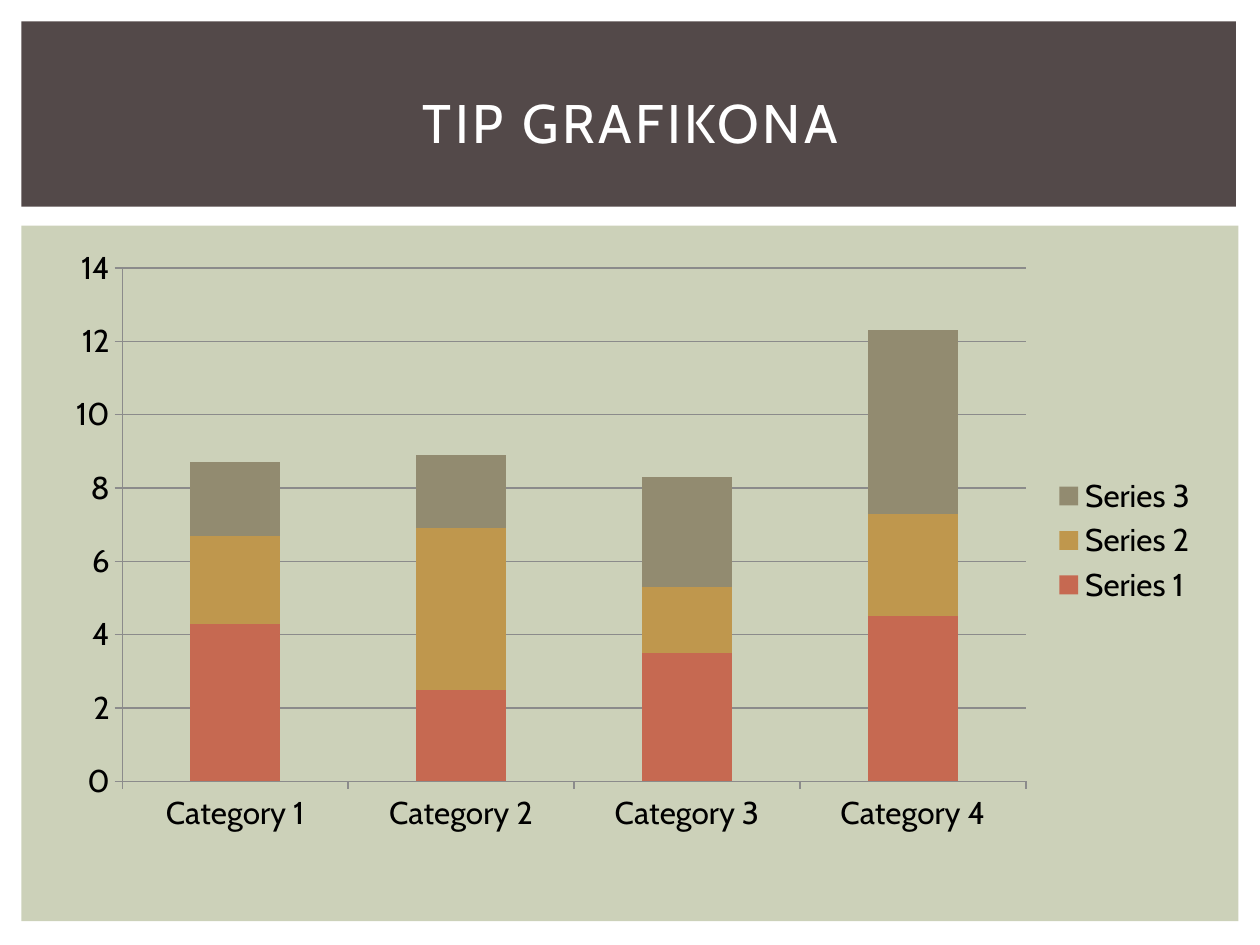
from pptx import Presentation
from pptx.chart.data import CategoryChartData
from pptx.dml.color import RGBColor
from pptx.enum import chart as charts, shapes, text
from pptx.util import Inches, Pt

FONT = "Cabin"
WHITE = RGBColor(0xFF, 0xFF, 0xFF)
BLACK = RGBColor(0x00, 0x00, 0x00)
SAGE = RGBColor(0xCC, 0xD1, 0xB9)
BROWN = RGBColor(0x53, 0x49, 0x49)
GRID = RGBColor(0x8B, 0x8B, 0x8B)
RUST = RGBColor(0xC6, 0x69, 0x51)
GOLD = RGBColor(0xBF, 0x97, 0x4D)
OLIVE = RGBColor(0x92, 0x8B, 0x70)

SERIES = [
    ("Series 1", (4.3, 2.5, 3.5, 4.5), RUST),
    ("Series 2", (2.4, 4.4, 1.8, 2.8), GOLD),
    ("Series 3", (2, 2, 3, 5), OLIVE),
]


def write(frame, wording, size, color, align, spacing=0):
    """Fill a text frame with one formatted line; spacing is in points."""
    frame.word_wrap = True
    frame.vertical_anchor = text.MSO_ANCHOR.MIDDLE
    frame.margin_left = frame.margin_right = Inches(0.1)
    frame.margin_top = frame.margin_bottom = Inches(0.05)
    para = frame.paragraphs[0]
    para.alignment = align
    span = para.add_run()
    span.text = wording
    span.font.name = FONT
    span.font.size = Pt(size)
    span.font.color.rgb = color
    span.font._element.set("spc", str(spacing * 100))


deck = Presentation()
deck.slide_width, deck.slide_height = Inches(10), Inches(7.5)
page = deck.slides.add_slide(deck.slide_layouts[5])

# Background panels
for top, width, height, color in [(1.79, 9.66, 5.52, SAGE), (0.17, 9.64, 1.47, BROWN)]:
    panel = page.shapes.add_shape(
        shapes.MSO_SHAPE.RECTANGLE,
        Inches(0.17), Inches(top), Inches(width), Inches(height))
    panel.shadow.inherit = False
    panel.fill.solid()
    panel.fill.fore_color.rgb = color
    panel.line.fill.background()

# Title, brought in front of the panels
title = page.shapes.title
page.shapes._spTree.append(title._element)
title.left, title.top = Inches(0.42), Inches(0.39)
title.width, title.height = Inches(9.17), Inches(1.15)
write(title.text_frame, "TIP GRAFIKONA", size=31, color=WHITE,
      align=text.PP_ALIGN.CENTER, spacing=2)

# Stacked column chart
data = CategoryChartData()
data.categories = [f"Category {number}" for number in range(1, 5)]
for name, values, _ in SERIES:
    data.add_series(name, values)
chart = page.shapes.add_chart(
    charts.XL_CHART_TYPE.COLUMN_STACKED,
    Inches(0.42), Inches(1.88), Inches(9.19), Inches(4.82), data).chart
chart.has_title = False
chart.font.name = FONT
chart.font.size = Pt(18)
chart.font.color.rgb = BLACK

chart.has_legend = True
chart.legend.position = charts.XL_LEGEND_POSITION.RIGHT
chart.legend.include_in_layout = False

plot = chart.plots[0]
plot.gap_width = 150
plot.overlap = 100
plot.vary_by_categories = False
for series, (_, _, color) in zip(plot.series, SERIES):
    series.format.fill.solid()
    series.format.fill.fore_color.rgb = color

value_axis = chart.value_axis
value_axis.minimum_scale, value_axis.maximum_scale = 0, 14
value_axis.major_unit = 2
value_axis.has_major_gridlines = True
for axis in (chart.category_axis, value_axis):
    axis.major_tick_mark = charts.XL_TICK_MARK.OUTSIDE
for lined in (chart.category_axis, value_axis, value_axis.major_gridlines):
    lined.format.line.color.rgb = GRID
    lined.format.line.width = Pt(0.75)

deck.save("out.pptx")
